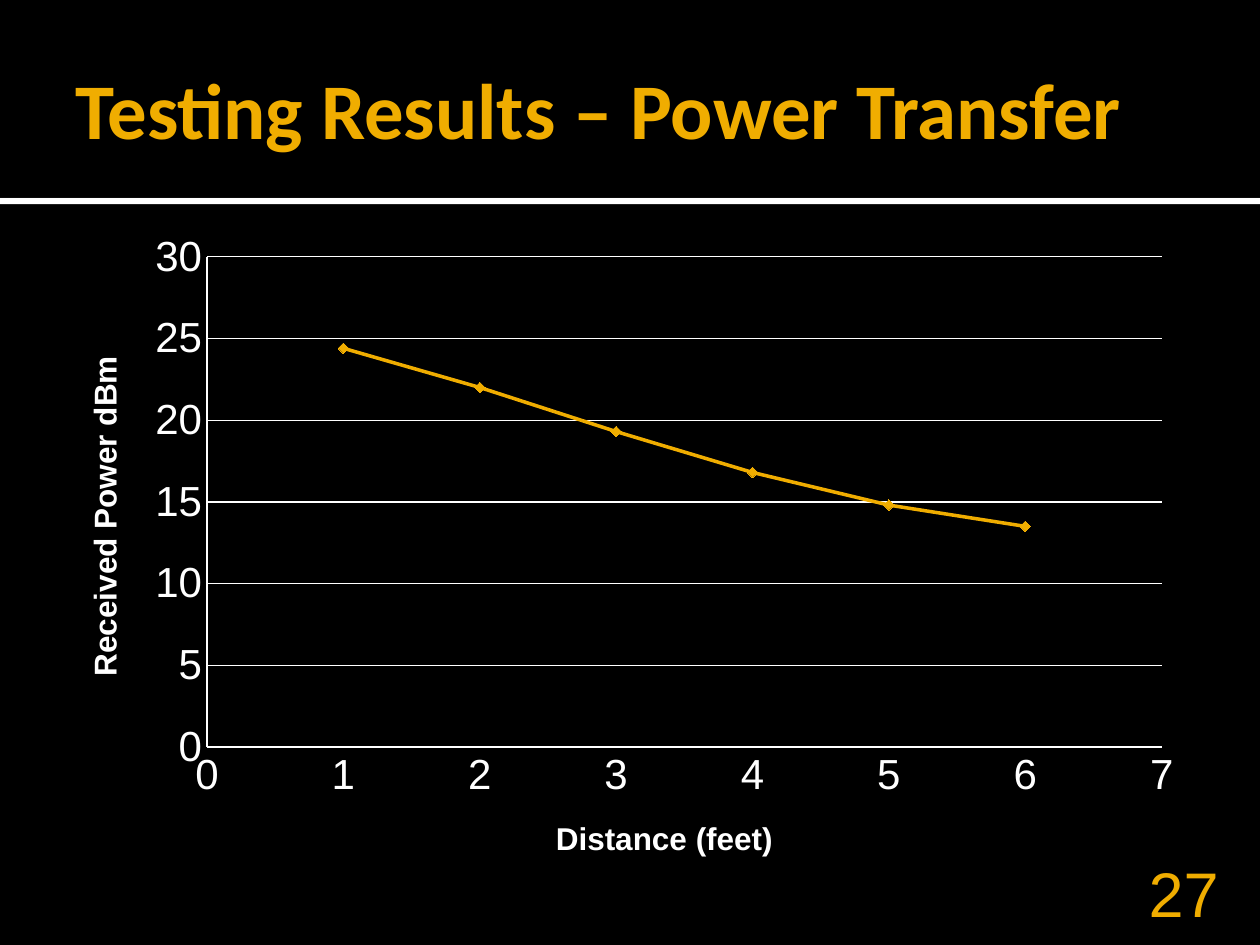
from dataclasses import dataclass

from pptx import Presentation
from pptx.chart.data import XyChartData
from pptx.dml.color import RGBColor
from pptx.enum.chart import XL_CHART_TYPE, XL_MARKER_STYLE, XL_TICK_MARK
from pptx.enum.shapes import MSO_SHAPE
from pptx.enum.text import MSO_ANCHOR, PP_ALIGN
from pptx.oxml.xmlchemy import OxmlElement
from pptx.util import Inches, Pt


@dataclass(frozen=True)
class Theme:
    background: RGBColor = RGBColor(0x00, 0x00, 0x00)
    light: RGBColor = RGBColor(0xFF, 0xFF, 0xFF)
    accent: RGBColor = RGBColor(0xF0, 0xAD, 0x00)
    title_font: str = "Calibri"
    body_font: str = "Arial"
    title_size: Pt = Pt(45)
    number_size: Pt = Pt(36)
    label_size: Pt = Pt(24)
    axis_title_size: Pt = Pt(18)


THEME = Theme()
POWER_BY_DISTANCE = [(6, 13.5), (5, 14.8), (4, 16.8), (3, 19.3), (2, 22), (1, 24.4)]


def apply_format(target, values):
    for name, value in values.items():
        setattr(target, name, value)


def style_font(font, color, **values):
    apply_format(font, values)
    font.color.rgb = color


def add_bar(page, area, color):
    bar = page.shapes.add_shape(MSO_SHAPE.RECTANGLE, *map(Inches, area))
    bar.shadow.inherit = False
    bar.fill.solid()
    bar.fill.fore_color.rgb = color
    bar.line.fill.background()


def add_text(page, area, text, frame_format, alignment, **font_values):
    box = page.shapes.add_textbox(*map(Inches, area))
    frame = box.text_frame
    apply_format(frame, {"word_wrap": True, **frame_format})
    para = frame.paragraphs[0]
    para.alignment = alignment
    span = para.add_run()
    span.text = text
    style_font(span.font, THEME.accent, **font_values)


def style_axis(axis, title, maximum, step, gridlines):
    apply_format(axis, {
        "minimum_scale": 0,
        "maximum_scale": maximum,
        "major_unit": step,
        "has_major_gridlines": gridlines,
        "major_tick_mark": XL_TICK_MARK.NONE,
        "minor_tick_mark": XL_TICK_MARK.NONE,
    })
    style_font(axis.tick_labels.font, THEME.light,
               name=THEME.body_font, size=THEME.label_size)
    apply_format(axis.tick_labels, {"number_format": "General",
                                    "number_format_is_linked": False})
    lines = [axis.format.line]
    if gridlines:
        lines.append(axis.major_gridlines.format.line)
    for line in lines:
        line.color.rgb = THEME.light
        line.width = Pt(0.75)
    para = axis.axis_title.text_frame.paragraphs[0]
    span = para.add_run()
    span.text = title
    style_font(span.font, THEME.light, name=THEME.body_font,
               size=THEME.axis_title_size, bold=True)


def place_plot(chart, x, y, w, h):
    """Fix the inner plot area, in fractions of the chart's size."""
    plot_area = chart.plots[0]._element.getparent()
    for old in plot_area.findall(plot_area.tag.replace("plotArea", "layout")):
        plot_area.remove(old)
    layout = OxmlElement("c:layout")
    manual = OxmlElement("c:manualLayout")
    settings = {"layoutTarget": "inner", "xMode": "edge", "yMode": "edge",
                "x": x, "y": y, "w": w, "h": h}
    for name, value in settings.items():
        item = OxmlElement(f"c:{name}")
        item.set("val", str(value))
        manual.append(item)
    layout.append(manual)
    plot_area.insert(0, layout)


def add_power_chart(page, area):
    data = XyChartData()
    readings = data.add_series("Series 1")
    for distance, power in POWER_BY_DISTANCE:
        readings.add_data_point(distance, power)
    chart = page.shapes.add_chart(
        XL_CHART_TYPE.XY_SCATTER_LINES, *map(Inches, area), data).chart
    apply_format(chart, {"has_legend": False, "has_title": False})
    style_font(chart.font, THEME.light, name=THEME.title_font, size=Pt(10))
    chart.plots[0].vary_by_categories = False
    style_axis(chart.category_axis, "Distance (feet)", 7, 1, False)
    style_axis(chart.value_axis, "Received Power dBm", 30, 5, True)
    place_plot(chart, 0.127, 0.055, 0.842, 0.741)

    series = chart.plots[0].series[0]
    series.smooth = False
    series.format.line.color.rgb = THEME.accent
    series.format.line.width = Pt(2)
    apply_format(series.marker, {"style": XL_MARKER_STYLE.DIAMOND, "size": 6})
    series.marker.format.fill.solid()
    series.marker.format.fill.fore_color.rgb = THEME.accent
    series.marker.format.line.color.rgb = THEME.accent


def main():
    deck = Presentation()
    apply_format(deck, {"slide_width": Inches(10), "slide_height": Inches(7.5)})
    page = deck.slides.add_slide(deck.slide_layouts[6])
    page.background.fill.solid()
    page.background.fill.fore_color.rgb = THEME.background

    add_bar(page, (0, 1.57, 10, 0.05), THEME.light)
    add_bar(page, (0, 0, 10, 1.57), THEME.background)
    add_text(page, (0.5, 0.17, 9, 1.37), "Testing Results – Power Transfer",
             {"vertical_anchor": MSO_ANCHOR.MIDDLE, "margin_right": Inches(0.05)},
             PP_ALIGN.LEFT, name=THEME.title_font, size=THEME.title_size, bold=True)
    add_text(page, (8.97, 7.08, 0.8, 0.3), "27",
             {"vertical_anchor": MSO_ANCHOR.BOTTOM, "margin_bottom": 0},
             PP_ALIGN.RIGHT, name=THEME.body_font, size=THEME.number_size)
    add_power_chart(page, (0.5, 1.75, 9, 5.25))
    deck.save("out.pptx")


if __name__ == "__main__":
    main()
